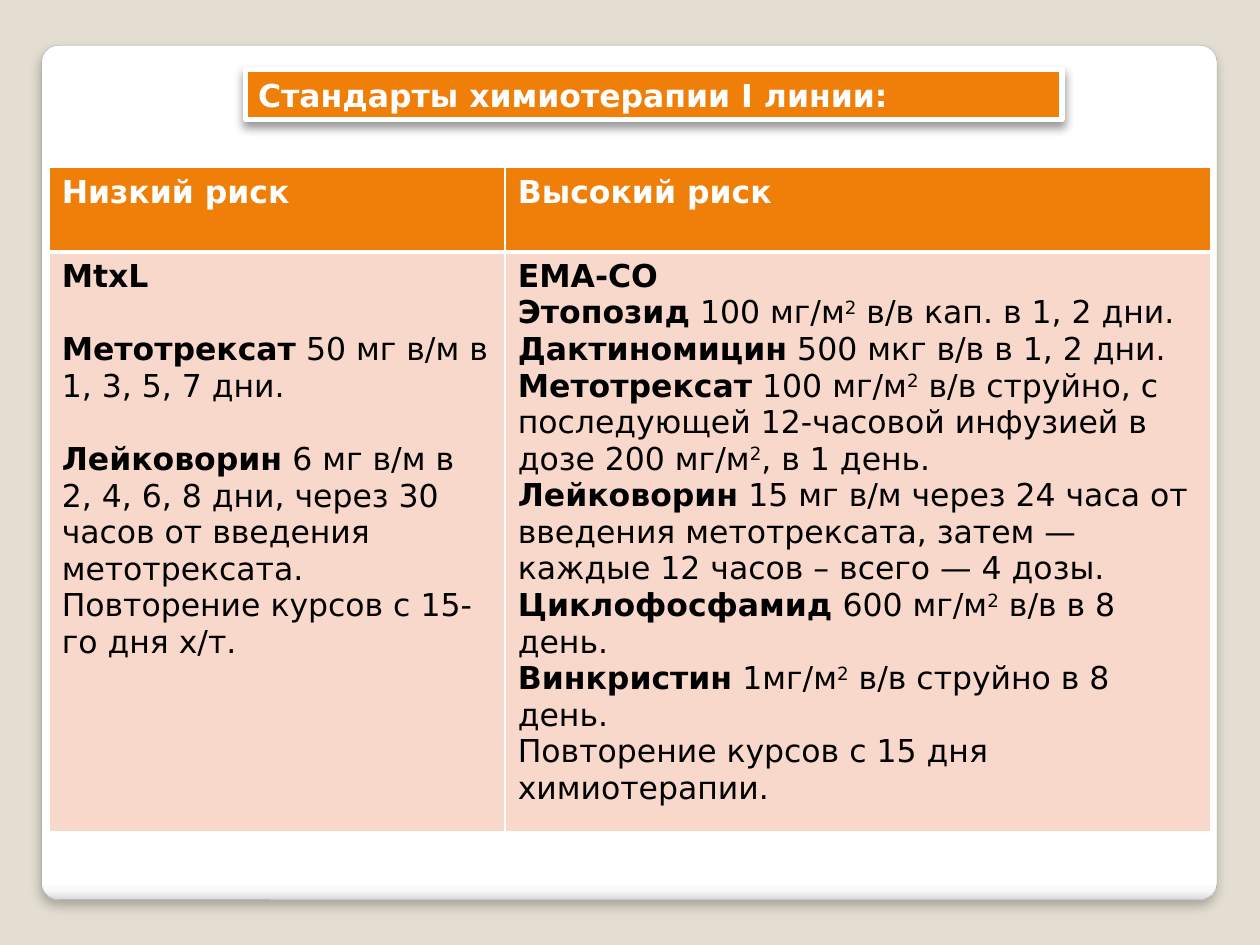
"""Build a slide comparing first-line chemotherapy standards by risk group."""
from dataclasses import dataclass, field
from typing import NamedTuple

import pptx
import pptx.dml.color
import pptx.enum.shapes
import pptx.enum.text
import pptx.oxml
import pptx.oxml.ns
import pptx.util
from pptx.util import Inches


@dataclass(frozen=True)
class Theme:
    font: str = "DejaVu Sans"
    text_size: float = 18
    blank_line: float = 21
    background: str = "E3DED1"
    accent: str = "F07F09"
    body_fill: str = "F9D8CC"
    white: str = "FFFFFF"
    black: str = "000000"
    card_line: str = "A4A4A4"
    card_stops: tuple = ((0, "FFFFFF"), (98, "FFFFFF"), (99, "F7F7F7"), (100, "DADADA"))


class Span(NamedTuple):
    text: str
    bold: bool = False
    superscript: bool = False


@dataclass(frozen=True)
class Line:
    spans: list[Span]
    gap_before: bool = False


@dataclass(frozen=True)
class RiskGroup:
    title: str
    width: float
    lines: list[Line] = field(default_factory=list)


class Shadow(NamedTuple):
    opacity: int
    blur: float
    distance: float


THEME = Theme()
SQUARE = Span("2", superscript=True)


def drug(name: str, *dose: str, gap_before: bool = False) -> Line:
    """Return a line with a bold name and dose parts joined by a superscript 2."""
    spans = [Span(name, bold=True)]
    for index, part in enumerate(dose):
        spans += [SQUARE] * (index > 0) + [Span(part)]
    return Line(spans, gap_before)


RISK_GROUPS = [
    RiskGroup("Низкий риск", 3.62, [
        drug("MtxL"),
        drug("Метотрексат", " 50 мг в/м в 1, 3, 5, 7 дни.", gap_before=True),
        drug("Лейковорин", " 6 мг в/м в 2, 4, 6, 8 дни, через 30 часов от введения метотрексата.",
             gap_before=True),
        Line([Span("Повторение курсов с 15-го дня х/т.")]),
    ]),
    RiskGroup("Высокий риск", 5.6, [
        drug("ЕМА-СО"),
        drug("Этопозид", " 100 мг/м", " в/в кап. в 1, 2 дни."),
        drug("Дактиномицин", " 500 мкг в/в в 1, 2 дни."),
        drug("Метотрексат", " 100 мг/м",
             " в/в струйно, с последующей 12-часовой инфузией в дозе 200 мг/м", ", в 1 день."),
        drug("Лейковорин", " 15 мг в/м через 24 часа от введения метотрексата, "
             "затем — каждые 12 часов – всего — 4 дозы."),
        drug("Циклофосфамид", " 600 мг/м", " в/в в 8 день."),
        drug("Винкристин", " 1мг/м", " в/в струйно в 8 день."),
        Line([Span("Повторение курсов с 15 дня химиотерапии.")]),
    ]),
]


def rgb(color: str) -> pptx.dml.color.RGBColor:
    """Return a colour object for a hexadecimal colour."""
    return pptx.dml.color.RGBColor.from_string(color)


def xml(body: str):
    """Return an element for a drawing fragment whose root tag lacks its namespace."""
    tag, rest = body[1:].split(" ", 1)
    return pptx.oxml.parse_xml(f"<{tag} {pptx.oxml.ns.nsdecls('a')} {rest}")


def write_lines(text_frame, lines: list[Line], color: str) -> None:
    """Fill a text frame with styled lines."""
    for index, line in enumerate(lines):
        paragraph = text_frame.add_paragraph() if index else text_frame.paragraphs[0]
        paragraph.alignment = pptx.enum.text.PP_ALIGN.LEFT
        if line.gap_before:
            paragraph.space_before = pptx.util.Pt(THEME.blank_line)
        paragraph.font.name = THEME.font
        paragraph.font.size = pptx.util.Pt(THEME.text_size)
        paragraph.font.color.rgb = rgb(color)
        for span in line.spans:
            run = paragraph.add_run()
            run.text = span.text
            run.font.bold = span.bold
            if span.superscript:
                run.font._element.set("baseline", "30000")


def add_panel(slide, kind, box: tuple, line_color: str, line_width: float, shadow: Shadow):
    """Add an outlined shape with a soft shadow falling downwards."""
    shape = slide.shapes.add_shape(kind, *map(Inches, box))
    shape.line.color.rgb = rgb(line_color)
    shape.line.width = pptx.util.Pt(line_width)
    shape.shadow.inherit = False
    effects = shape._element.spPr.find(pptx.oxml.ns.qn("a:effectLst"))
    effects.append(xml(
        f'<a:outerShdw blurRad="{pptx.util.Pt(shadow.blur)}" dist="{pptx.util.Pt(shadow.distance)}" '
        f'dir="5400000" algn="t" rotWithShape="0"><a:srgbClr val="{THEME.black}">'
        f'<a:alpha val="{shadow.opacity * 1000}"/></a:srgbClr></a:outerShdw>'))
    return shape


def add_card(slide) -> None:
    """Add the rounded white card behind the content."""
    card = add_panel(slide, pptx.enum.shapes.MSO_SHAPE.ROUNDED_RECTANGLE,
                     (0.33, 0.36, 9.33, 6.78), THEME.card_line, 0.16, Shadow(25, 6, 4))
    card.adjustments[0] = 0.02
    card.fill.gradient()
    card.fill.gradient_angle = 270
    stops = card._element.spPr.find(".//" + pptx.oxml.ns.qn("a:gsLst"))
    for stop in list(stops):
        stops.remove(stop)
    for position, color in THEME.card_stops:
        stops.append(xml(f'<a:gs pos="{position * 1000}"><a:srgbClr val="{color}"/></a:gs>'))


def add_title(slide, text: str) -> None:
    """Add the title banner."""
    banner = add_panel(slide, pptx.enum.shapes.MSO_SHAPE.RECTANGLE,
                       (1.95, 0.55, 6.48, 0.4), THEME.white, 3, Shadow(40, 5.2, 3))
    banner.fill.solid()
    banner.fill.fore_color.rgb = rgb(THEME.accent)
    banner.text_frame.word_wrap = True
    write_lines(banner.text_frame, [Line([Span(text, bold=True)])], THEME.white)


def style_cell(cell, fill: str, top: float, bottom: float) -> None:
    """Give a cell white borders and a solid fill."""
    properties = cell._tc.get_or_add_tcPr()
    for side, width in zip("LRTB", (1, 1, top, bottom)):
        properties.append(xml(
            f'<a:ln{side} w="{pptx.util.Pt(width)}"><a:solidFill>'
            f'<a:srgbClr val="{THEME.white}"/></a:solidFill></a:ln{side}>'))
    cell.fill.solid()
    cell.fill.fore_color.rgb = rgb(fill)


def add_risk_table(slide, groups: list[RiskGroup]) -> None:
    """Add the table with one column for each risk group."""
    table = slide.shapes.add_table(2, len(groups), *map(Inches, (0.39, 1.33, 9.22, 5.27))).table
    table.rows[0].height, table.rows[1].height = Inches(0.67), Inches(4.6)
    for column, group in enumerate(groups):
        table.columns[column].width = Inches(group.width)
        header, body = table.cell(0, column), table.cell(1, column)
        style_cell(header, THEME.accent, top=1, bottom=3)
        style_cell(body, THEME.body_fill, top=3, bottom=1)
        write_lines(header.text_frame, [Line([Span(group.title, bold=True)])], THEME.white)
        write_lines(body.text_frame, group.lines, THEME.black)


def main() -> None:
    """Build and save the presentation."""
    presentation = pptx.Presentation()
    presentation.slide_width, presentation.slide_height = Inches(10), Inches(7.5)
    slide = presentation.slides.add_slide(presentation.slide_layouts[6])
    slide.background.fill.solid()
    slide.background.fill.fore_color.rgb = rgb(THEME.background)
    add_card(slide)
    add_title(slide, "Стандарты химиотерапии I линии:")
    add_risk_table(slide, RISK_GROUPS)
    presentation.save("out.pptx")


if __name__ == "__main__":
    main()
